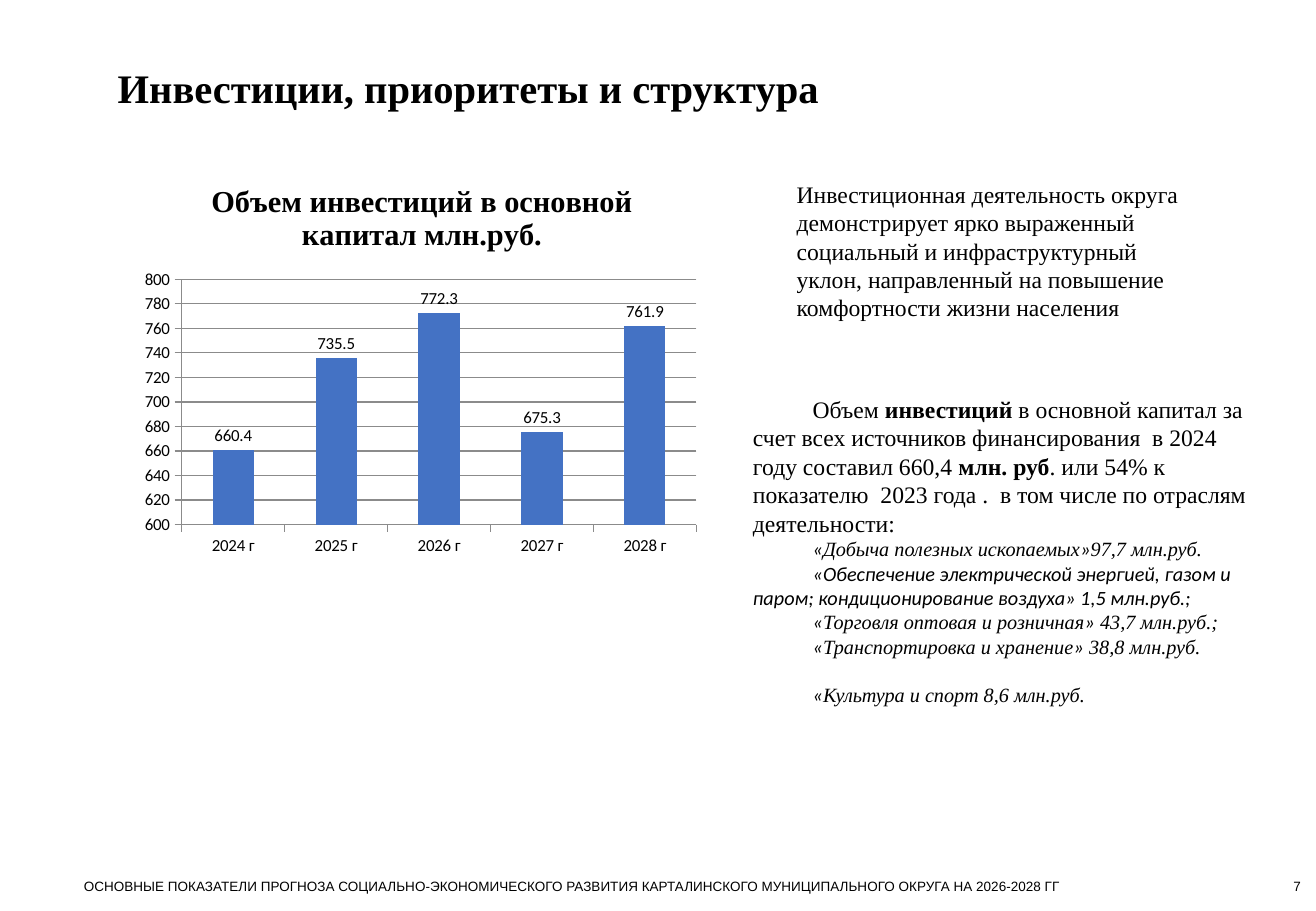
import pptx
import pptx.chart.data
import pptx.dml.color
import pptx.enum.chart
import pptx.enum.text
import pptx.oxml
import pptx.util

Pt = pptx.util.Pt
BLACK = pptx.dml.color.RGBColor(0, 0, 0)
BLUE = pptx.dml.color.RGBColor(0x44, 0x72, 0xC4)
GRAY = pptx.dml.color.RGBColor(0x8B, 0x8B, 0x8B)
SERIF = "Times New Roman"
SANS = "Calibri"


def format_frame(shape, left, top, width, height, margins=(7.2, 3.6)):
    shape.left, shape.top, shape.width, shape.height = Pt(left), Pt(top), Pt(width), Pt(height)
    frame = shape.text_frame
    frame.word_wrap = True
    frame.auto_size = pptx.enum.text.MSO_AUTO_SIZE.NONE
    frame.vertical_anchor = pptx.enum.text.MSO_ANCHOR.TOP
    frame.margin_left = frame.margin_right = Pt(margins[0])
    frame.margin_top = frame.margin_bottom = Pt(margins[1])
    return frame


def add_run(paragraph, text, size, name, bold=False, italic=False):
    run = paragraph.add_run()
    run.text = text
    run.font.size = Pt(size)
    run.font.name = name
    run.font.bold = bold
    run.font.italic = italic
    run.font.color.rgb = BLACK


presentation = pptx.Presentation()
presentation.slide_width = Pt(780)
presentation.slide_height = Pt(540)
slide = presentation.slides.add_slide(presentation.slide_layouts[5])
shapes = slide.shapes

title = format_frame(shapes.title, 62.6, 33.8, 522, 36).paragraphs[0]
title.alignment = pptx.enum.text.PP_ALIGN.LEFT
add_run(title, "Инвестиции, приоритеты и структура", 24, SERIF, bold=True)

number_frame = format_frame(shapes.add_textbox(0, 0, 0, 0), 713.5, 520.5, 57.6, 9.4, (0, 0))
number_frame.vertical_anchor = pptx.enum.text.MSO_ANCHOR.BOTTOM
number_frame.paragraphs[0].alignment = pptx.enum.text.PP_ALIGN.RIGHT
add_run(number_frame.paragraphs[0], "7", 8, "Arial")

footer_frame = format_frame(shapes.add_textbox(0, 0, 0, 0), 49.7, 520.5, 604.8, 9.4, (0, 0))
add_run(
    footer_frame.paragraphs[0],
    "ОСНОВНЫЕ ПОКАЗАТЕЛИ ПРОГНОЗА СОЦИАЛЬНО-ЭКОНОМИЧЕСКОГО РАЗВИТИЯ "
    "КАРТАЛИНСКОГО МУНИЦИПАЛЬНОГО ОКРУГА НА 2026-2028 ГГ",
    8, "Arial",
)

chart_data = pptx.chart.data.CategoryChartData()
chart_data.categories = [f"{year} г" for year in range(2024, 2029)]
chart_data.add_series("Series 1", (660.4, 735.5, 772.3, 675.3, 761.9))
chart = shapes.add_chart(
    pptx.enum.chart.XL_CHART_TYPE.COLUMN_CLUSTERED,
    Pt(80.6), Pt(96.5), Pt(339), Pt(238.3), chart_data,
).chart
chart.font.size = Pt(10)
chart.font.name = SANS
chart.font.color.rgb = BLACK
chart.has_legend = False
chart.has_title = True
add_run(
    chart.chart_title.text_frame.paragraphs[0],
    "Объем инвестиций в основной капитал млн.руб.", 18, SERIF, bold=True,
)

plot = chart.plots[0]
plot.vary_by_categories = False
plot.gap_width = 150
plot.has_data_labels = True
plot.data_labels.show_value = True
plot.data_labels.position = pptx.enum.chart.XL_LABEL_POSITION.OUTSIDE_END
series_fill = plot.series[0].format.fill
series_fill.solid()
series_fill.fore_color.rgb = BLUE

value_axis = chart.value_axis
value_axis.minimum_scale = 600
value_axis.maximum_scale = 800
value_axis.major_unit = 20
value_axis.has_major_gridlines = True
chart.category_axis.has_major_gridlines = False
for line in (
    value_axis.format.line,
    value_axis.major_gridlines.format.line,
    chart.category_axis.format.line,
):
    line.color.rgb = GRAY
    line.width = Pt(0.75)

plot_area = chart.plots[0]._element.getparent()
for layout in plot_area.findall(pptx.oxml.ns.qn("c:layout")):
    plot_area.remove(layout)
plot_area.insert(0, pptx.oxml.parse_xml(
    '<c:layout xmlns:c="http://schemas.openxmlformats.org/drawingml/2006/chart">'
    '<c:manualLayout><c:layoutTarget val="inner"/>'
    '<c:xMode val="edge"/><c:yMode val="edge"/>'
    '<c:x val="0.08"/><c:y val="0.29"/><c:w val="0.9"/><c:h val="0.61"/>'
    '</c:manualLayout></c:layout>'
))

summary_frame = format_frame(shapes.add_textbox(0, 0, 0, 0), 465.1, 103, 244, 92.2)
add_run(
    summary_frame.paragraphs[0],
    "Инвестиционная деятельность округа демонстрирует ярко выраженный социальный и "
    "инфраструктурный уклон, направленный на повышение комфортности жизни населения",
    14, SERIF,
)

details_frame = format_frame(shapes.add_textbox(0, 0, 0, 0), 439.2, 229.7, 314, 193.7)
details_frame.vertical_anchor = pptx.enum.text.MSO_ANCHOR.MIDDLE
volume = details_frame.paragraphs[0]
for text, bold in (
    ("Объем ", False),
    ("инвестиций", True),
    (" в основной капитал за счет всех источников финансирования  в 2024  году составил 660,4", False),
    (" млн. руб", True),
    (". или 54% к показателю  2023 года .  в том числе по отраслям деятельности:", False),
):
    add_run(volume, text, 14, SERIF, bold=bold)

industries = (
    (("«", SANS), ("Добыча полезных ископаемых", SERIF), ("»", SANS), ("97,7 млн.руб.", SERIF)),
    (("«Обеспечение электрической энергией, газом и паром; "
      "кондиционирование воздуха» 1,5 млн.руб.;", SANS),),
    (("«", SANS), ("Торговля оптовая и розничная", SERIF), ("»", SANS), (" 43,7 млн.руб.;", SERIF)),
    (("«", SANS), ("Транспортировка и хранение", SERIF), ("»", SANS), (" 38,8 млн.руб.", SERIF)),
    (("«", SANS), ("Культура и спорт 8,6 млн.руб.", SERIF)),
)
for industry in industries:
    paragraph = details_frame.add_paragraph()
    for text, name in industry:
        add_run(paragraph, text, 12, name, italic=True)
details_frame.paragraphs[-1].space_before = Pt(14.4)

for paragraph in details_frame.paragraphs:
    properties = paragraph._p.get_or_add_pPr()
    properties.set("marL", "0")
    properties.set("indent", str(Pt(35.4)))

presentation.save("out.pptx")
